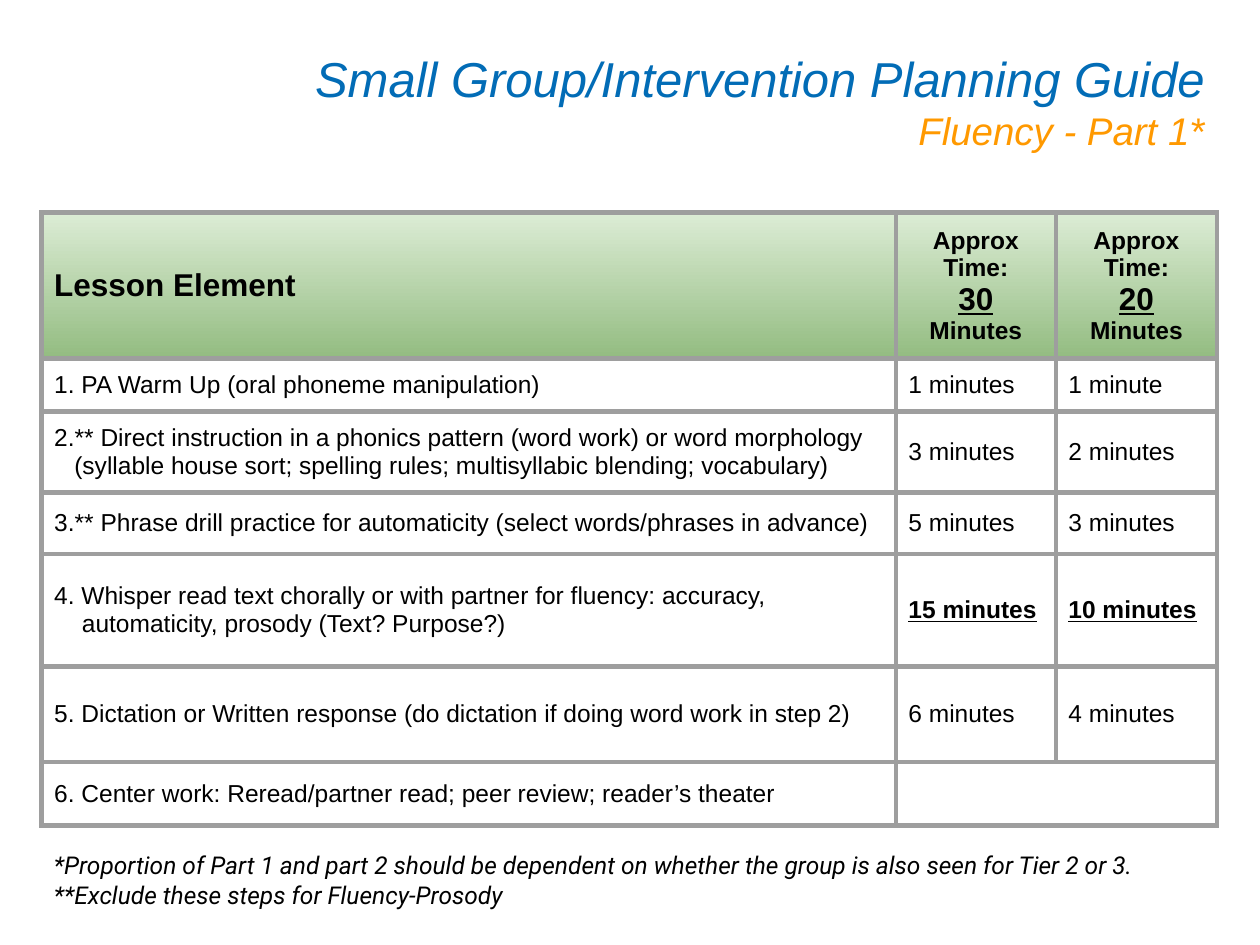
import pptx
import pptx.util
import pptx.dml.color
import pptx.enum.text
import lxml.etree
from collections import namedtuple

Box = namedtuple("Box", "left top width height")
ALIGN = pptx.enum.text.PP_ALIGN
ANCHOR = pptx.enum.text.MSO_ANCHOR
COLORS = {
    "blue": "026CB6",
    "orange": "FF9900",
    "black": "000000",
    "border": "9E9E9E",
    "header_top": "DCECD5",
    "header_bottom": "93BC81",
}
COLUMN_WEIGHTS = [6.78, 1.27, 1.28]
ROW_WEIGHTS = [1.16, 0.42, 0.64, 0.49, 0.89, 0.76, 0.46]
LESSONS = [
    (["1. PA Warm Up (oral phoneme manipulation)"], 0, "1 minutes", "1 minute"),
    (["2.** Direct instruction in a phonics pattern (word work) or word morphology",
      "(syllable house sort; spelling rules; multisyllabic blending; vocabulary)"],
     0.16, "3 minutes", "2 minutes"),
    (["3.** Phrase drill practice for automaticity (select words/phrases in advance)"],
     0, "5 minutes", "3 minutes"),
    (["4. Whisper read text chorally or with partner for fluency: accuracy,",
      "automaticity, prosody (Text? Purpose?)"], 0.22, "15 minutes", "10 minutes"),
    (["5. Dictation or Written response (do dictation if doing word work in step 2)"],
     0, "6 minutes", "4 minutes"),
    (["6. Center work: Reread/partner read; peer review; reader’s theater"], 0, "", ""),
]
KEY_LESSON = 4


def rgb(name):
    return pptx.dml.color.RGBColor.from_string(COLORS[name])


def add_span(para, text, size, color="black", font="Arial", bold=False, italic=False, underline=False):
    span = para.add_run()
    span.text = text
    span.font.name = font
    span.font.size = pptx.util.Pt(size)
    span.font.color.rgb = rgb(color)
    span.font.bold = bold
    span.font.italic = italic
    span.font.underline = underline


def next_para(frame, index):
    return frame.add_paragraph() if index else frame.paragraphs[0]


def set_insets(frame, horizontal, vertical):
    frame.margin_left = frame.margin_right = pptx.util.Inches(horizontal)
    frame.margin_top = frame.margin_bottom = pptx.util.Inches(vertical)
    frame.word_wrap = True


def build_title(page, box):
    title = page.shapes.title
    title.left, title.top, title.width, title.height = box
    frame = title.text_frame
    set_insets(frame, 0.1, 0.05)
    frame.vertical_anchor = ANCHOR.MIDDLE
    para = frame.paragraphs[0]
    para.alignment = ALIGN.RIGHT
    add_span(para, "Small Group/Intervention Planning Guide", 28, "blue", italic=True)
    para.add_line_break()
    add_span(para, "Fluency - Part 1*", 22, "orange", italic=True)


def style_cell(cell, header):
    cell.vertical_anchor = ANCHOR.MIDDLE
    cell.margin_left = cell.margin_right = pptx.util.Inches(0.1)
    cell.margin_top = cell.margin_bottom = pptx.util.Inches(0.1)
    if header:
        cell.fill.gradient()
        cell.fill.gradient_angle = 270
        for stop, position, color in zip(cell.fill.gradient_stops, (0, 1), ("header_top", "header_bottom")):
            stop.position = position
            stop.color.rgb = rgb(color)
    else:
        cell.fill.background()
    properties = cell._tc.get_or_add_tcPr()
    namespace = pptx.oxml.ns.nsdecls("a")
    for index, side in enumerate("LRTB"):
        properties.insert(index, pptx.oxml.parse_xml(
            f'<a:ln{side} {namespace} w="{pptx.util.Pt(3)}"><a:solidFill>'
            f'<a:srgbClr val="{COLORS["border"]}"/></a:solidFill></a:ln{side}>'))


def fill_header(table):
    add_span(table.cell(0, 0).text_frame.paragraphs[0], "Lesson Element", 18, bold=True)
    for column, minutes in enumerate(("30", "20"), 1):
        frame = table.cell(0, column).text_frame
        label, amount = next_para(frame, 0), next_para(frame, 1)
        label.alignment = amount.alignment = ALIGN.CENTER
        add_span(label, "Approx Time:", 14, bold=True)
        add_span(amount, minutes, 18, bold=True, underline=True)
        add_span(amount, " ", 18, bold=True)
        add_span(amount, "Minutes", 14, bold=True)


def fill_lesson(table, row, lesson):
    lines, indent, *times = lesson
    frame = table.cell(row, 0).text_frame
    for index, line in enumerate(lines):
        para = next_para(frame, index)
        if index:
            para._p.get_or_add_pPr().set("marL", str(pptx.util.Inches(indent)))
        add_span(para, line, 14)
    key = row == KEY_LESSON
    for column, time in enumerate(times, 1):
        if time:
            add_span(table.cell(row, column).text_frame.paragraphs[0], time, 14, bold=key, underline=key)


def build_schedule(page, box):
    table = page.shapes.add_table(len(ROW_WEIGHTS), len(COLUMN_WEIGHTS), *box).table
    table.first_row = table.horz_banding = False
    for column, weight in zip(table.columns, COLUMN_WEIGHTS):
        column.width = int(box.width * weight / sum(COLUMN_WEIGHTS))
    for row, weight in zip(table.rows, ROW_WEIGHTS):
        row.height = int(box.height * weight / sum(ROW_WEIGHTS))
    for row in range(len(ROW_WEIGHTS)):
        for column in range(len(COLUMN_WEIGHTS)):
            style_cell(table.cell(row, column), row == 0)
    fill_header(table)
    for row, lesson in enumerate(LESSONS, 1):
        fill_lesson(table, row, lesson)
    last = len(LESSONS)
    table.cell(last, 1).merge(table.cell(last, 2))


def build_notes(page, box):
    frame = page.shapes.add_textbox(*box).text_frame
    set_insets(frame, 0.1, 0.05)
    notes = (
        "*Proportion of Part 1 and part 2 should be dependent on whether the group is also seen for Tier 2 or 3.",
        "**Exclude these steps for Fluency-Prosody",
    )
    for index, note in enumerate(notes):
        add_span(next_para(frame, index), note, 14, font="Roboto", italic=True)


def main():
    deck = pptx.Presentation()
    deck.slide_width = pptx.util.Inches(10)
    deck.slide_height = pptx.util.Inches(7.5)
    page = deck.slides.add_slide(deck.slide_layouts[5])

    def share(left, top, width, height):
        return Box(int(deck.slide_width * left), int(deck.slide_height * top),
                   int(deck.slide_width * width), int(deck.slide_height * height))

    build_schedule(page, share(0.033, 0.225, 0.933, 0.643))
    build_title(page, share(0.236, 0.035, 0.73, 0.144))
    build_notes(page, share(0.033, 0.893, 0.933, 0.071))
    deck.save("out.pptx")


if __name__ == "__main__":
    main()
